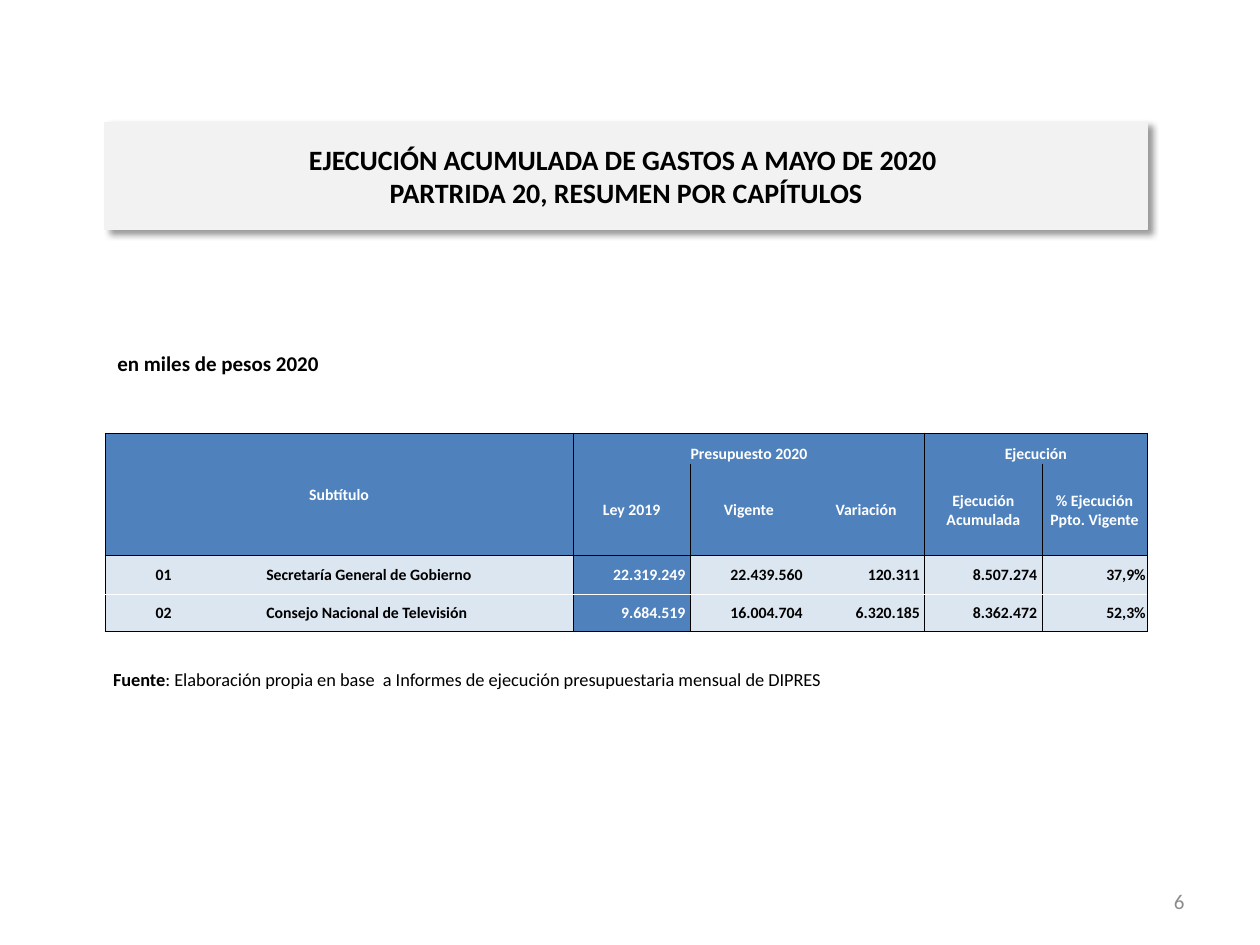
from lxml import etree
from pptx import Presentation
from pptx.dml.color import RGBColor
from pptx.enum import text as t
from pptx.oxml import parse_xml
from pptx.oxml.ns import nsdecls
from pptx.util import Pt

TITLE = "EJECUCIÓN ACUMULADA DE GASTOS A MAYO DE 2020 \vPARTRIDA 20, RESUMEN POR CAPÍTULOS"
UNIT = "en miles de pesos 2020"
SOURCE = [("Fuente", True),
          (": Elaboración propia en base  a Informes de ejecución presupuestaria mensual de DIPRES", False)]
PAGE = "6"

# A merged cell starts where its words stand: (row, column) to last (row, column)
SPANS = [((0, 0), (1, 2)), ((0, 3), (0, 5)), ((0, 6), (0, 7))]
ROWS = [
    ["Subtítulo", "", "", "Presupuesto 2020", "", "", "Ejecución", ""],
    ["", "", "", "Ley 2019", "Vigente", "Variación", "Ejecución Acumulada", "% Ejecución Ppto. Vigente"],
    ["01", "", "Secretaría General de Gobierno", "22.319.249", "22.439.560", "120.311", "8.507.274", "37,9%"],
    ["02", "", "Consejo Nacional de Televisión", "9.684.519", "16.004.704", "6.320.185", "8.362.472", "52,3%"],
]
WIDTHS = [67, 24.5, 176, 67, 67, 67, 67, 60]
HEIGHTS = [17.5, 52.5, 22, 21.5]

BLACK, WHITE, GREY = "000000", "FFFFFF", "F2F2F2"
BLUE, PALE = "4F81BD", "DCE6F1"
# Ruled grid lines, by the column or row they come before
UPRIGHT = {0: BLACK, 3: BLACK, 6: BLACK, 8: BLACK}
LEVEL = {0: BLACK, 2: BLACK, 3: WHITE, 4: BLACK}
PLAIN = "{2D5ABB26-0587-4C30-8999-92F81FD0307C}"
LEFT = 60
ALIGN, ANCHOR = t.PP_ALIGN, t.MSO_ANCHOR


def rgb(code):
    return RGBColor.from_string(code)


def style(par, size, color=BLACK, bold=None, align=None):
    font = par.font
    font.name, font.size, font.bold = "Calibri", Pt(size), bold
    font.color.rgb = rgb(color)
    par.alignment = align


def add_text(slide, box, runs, size, **look):
    frame = slide.shapes.add_textbox(*map(Pt, box)).text_frame
    frame.word_wrap = True
    par = frame.paragraphs[0]
    for words, bold in runs:
        run = par.add_run()
        run.text, run.font.bold = words, bold
    style(par, size, **look)
    return frame


def add_title(slide):
    shape = slide.shapes.title
    shape.left, shape.top, shape.width, shape.height = map(Pt, (LEFT, 70, 595.5, 61))
    shape.fill.solid()
    shape.fill.fore_color.rgb = rgb(GREY)
    shape.line.color.rgb = rgb(GREY)
    shape.line.width = Pt(0.75)
    shape._element.spPr.append(parse_xml(
        f'<a:effectLst {nsdecls("a")}><a:outerShdw blurRad="{Pt(4)}" dist="{Pt(3)}" '
        'dir="2700000" algn="tl" rotWithShape="0"><a:srgbClr val="000000">'
        '<a:alpha val="40000"/></a:srgbClr></a:outerShdw></a:effectLst>'))
    frame = shape.text_frame
    frame.auto_size = t.MSO_AUTO_SIZE.NONE
    frame.vertical_anchor = ANCHOR.MIDDLE
    frame.paragraphs[0].text = TITLE
    style(frame.paragraphs[0], 16, bold=True, align=ALIGN.CENTER)


def rule(cell, row, col):
    """Draw the grid lines that touch this cell."""
    edges = [("lnL", UPRIGHT.get(col)), ("lnR", UPRIGHT.get(col + cell.span_width)),
             ("lnT", LEVEL.get(row)), ("lnB", LEVEL.get(row + cell.span_height))]
    props = cell._tc.get_or_add_tcPr()
    for tag, color in edges:
        if color:
            props.append(parse_xml(
                f'<a:{tag} {nsdecls("a")} w="{Pt(0.5)}"><a:solidFill>'
                f'<a:srgbClr val="{color}"/></a:solidFill></a:{tag}>'))


def fill_cell(cell, row, col, words):
    head = row < 2
    blue = head or col == 3
    number = not head and col > 2
    rule(cell, row, col)
    cell.fill.solid()
    cell.fill.fore_color.rgb = rgb(BLUE if blue else PALE)
    cell.margin_left = cell.margin_top = Pt(0.7)
    cell.margin_right = Pt(2.8 if number and col < 7 else 0.7)
    cell.margin_bottom = 0
    cell.vertical_anchor = ANCHOR.BOTTOM if row == 0 and col else ANCHOR.MIDDLE
    par = cell.text_frame.paragraphs[0]
    par.text = words
    align = ALIGN.RIGHT if number else ALIGN.CENTER if head or col == 0 else ALIGN.JUSTIFY
    style(par, 9, WHITE if blue else BLACK, True, align)


def add_budget(slide):
    frame = slide.shapes.add_table(len(ROWS), len(WIDTHS), Pt(LEFT), Pt(247.5),
                                   Pt(sum(WIDTHS)), Pt(sum(HEIGHTS)))
    table = frame.table
    table.first_row = table.horz_banding = False
    table._tbl.tblPr[0].text = PLAIN
    for col, width in zip(table.columns, WIDTHS):
        col.width = Pt(width)
    for row, height in zip(table.rows, HEIGHTS):
        row.height = Pt(height)
    for first, last in SPANS:
        table.cell(*first).merge(table.cell(*last))
    for r, line in enumerate(ROWS):
        for c, words in enumerate(line):
            fill_cell(table.cell(r, c), r, c, words)


def main():
    deck = Presentation()
    deck.slide_width, deck.slide_height = Pt(720), Pt(540)
    slide = deck.slides.add_slide(deck.slide_layouts[5])
    add_title(slide)
    page = add_text(slide, (516, 500.5, 168, 29), [(PAGE, None)], 12, color="8C8C8C", align=ALIGN.RIGHT)
    page.vertical_anchor = ANCHOR.MIDDLE
    add_text(slide, (57.5, 378, 594, 29), SOURCE, 10.5)
    add_text(slide, (LEFT, 196.5, 584, 22), [(UNIT, None)], 12, bold=True)
    add_budget(slide)
    deck.save("out.pptx")


if __name__ == "__main__":
    main()
